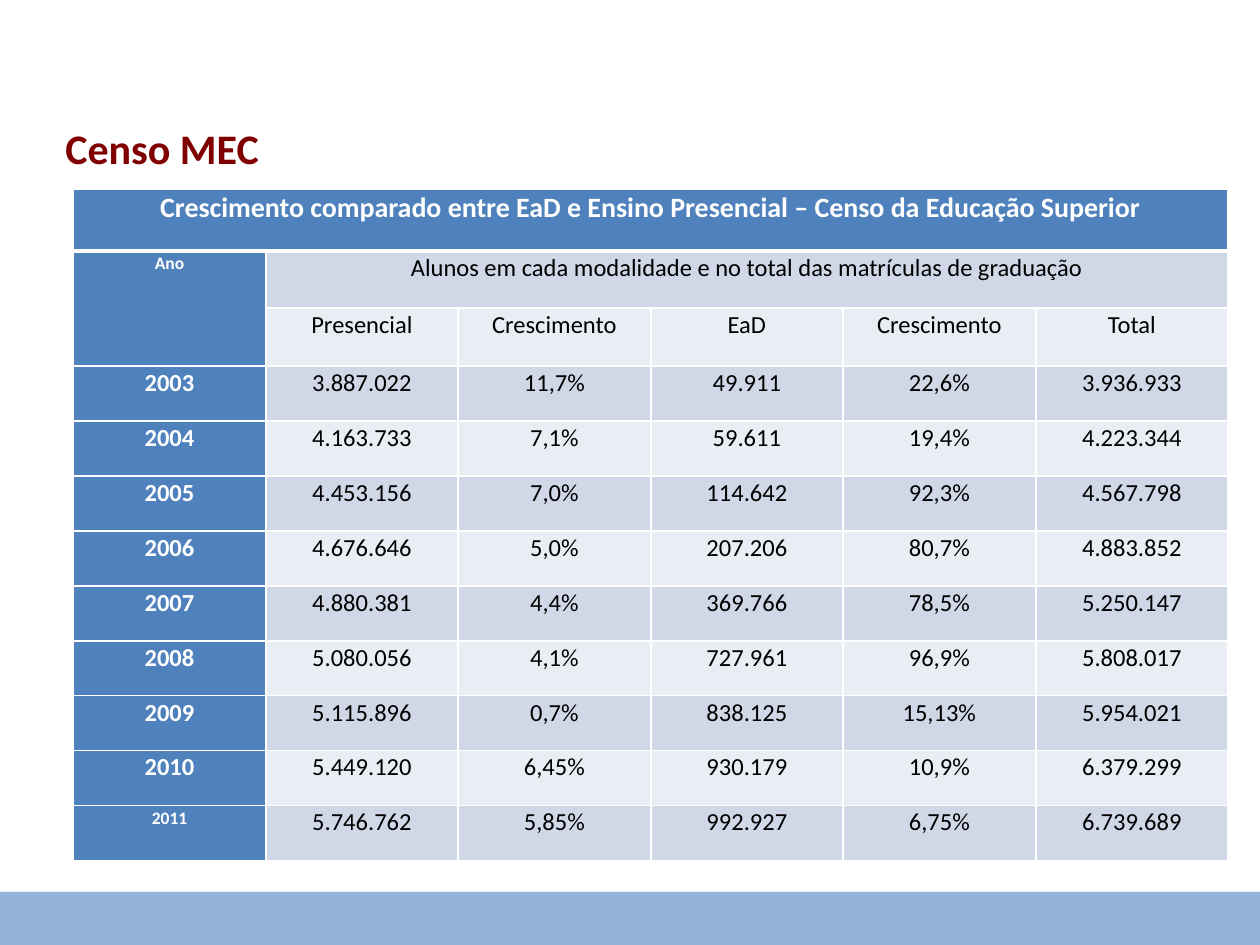
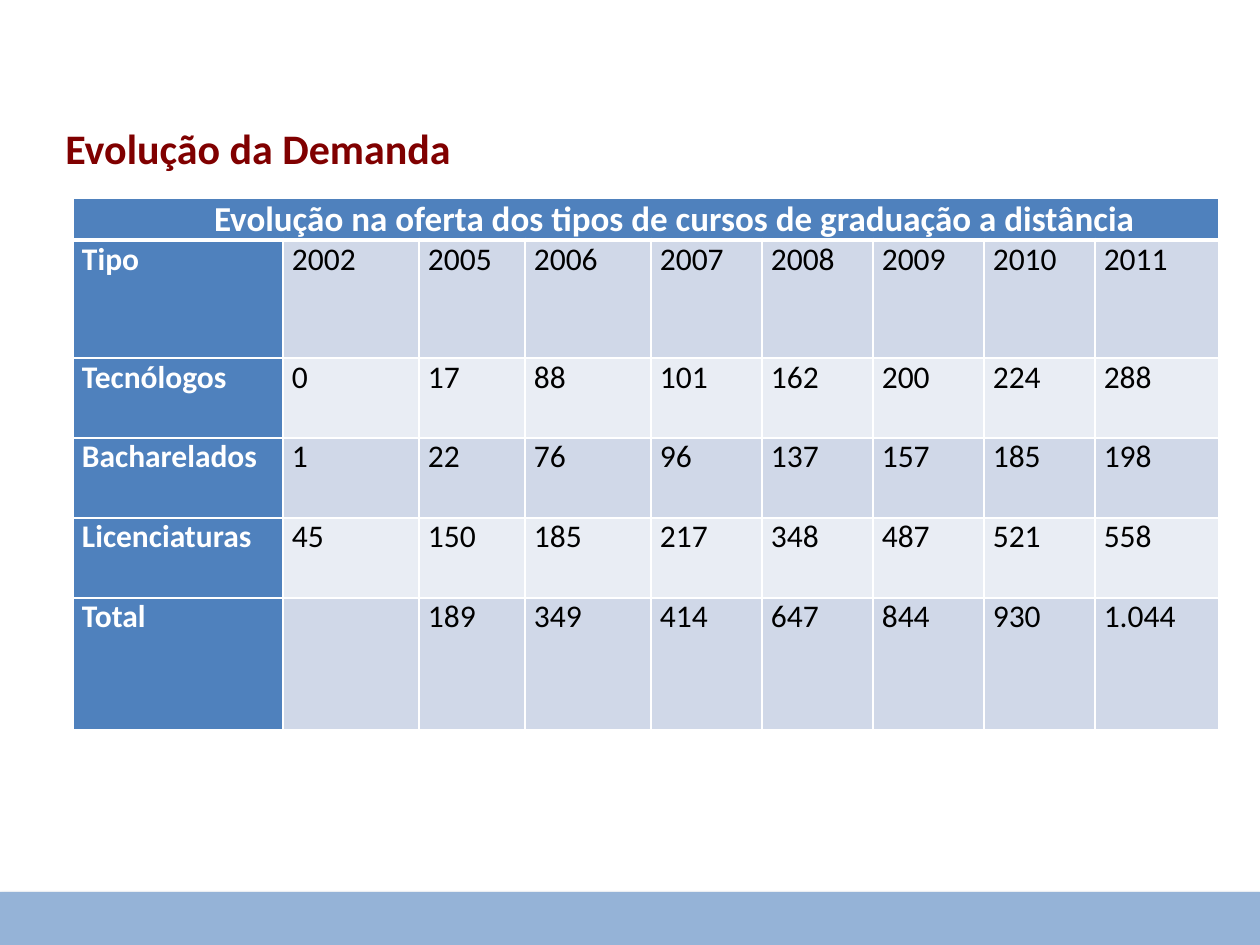
from dataclasses import dataclass

from lxml.etree import SubElement
from pptx import Presentation
from pptx.dml.color import RGBColor as RGB
from pptx.enum.shapes import MSO_SHAPE as SHAPE
from pptx.enum.text import PP_ALIGN as ALIGN
from pptx.oxml import parse_xml
from pptx.oxml.ns import nsdecls, qn
from pptx.util import Emu, Pt

PX = 914400 / 126


def px(n):
    return Emu(round(n * PX))


@dataclass(frozen=True)
class Theme:
    font: str = "Calibri"
    band: str = "95B3D7"
    title: str = "800000"
    head: str = "4F81BD"
    stripes: tuple = ("E9EDF4", "D0D8E8")
    light: str = "FFFFFF"
    dark: str = "000000"
    title_size: int = 24
    small_size: int = 10
    thin: int = 1
    thick: int = 3


class Deck:
    def __init__(self, theme, width, height):
        self.theme = theme
        self.width, self.height = width, height
        self.prs = Presentation()
        self.prs.slide_width, self.prs.slide_height = px(width), px(height)

    def slide(self, title, title_height):
        self.s = self.prs.slides.add_slide(self.prs.slide_layouts[6])
        self.band(892)
        self.title(title, title_height)

    def band(self, top):
        sp = self.s.shapes.add_shape(
            SHAPE.RECTANGLE, 0, px(top), px(self.width), px(self.height - top))
        sp.fill.solid()
        sp.fill.fore_color.rgb = RGB.from_string(self.theme.band)
        sp.line.fill.background()
        sp.shadow.inherit = False
        effects = sp._element.spPr.find(qn("a:effectLst"))
        effects.append(parse_xml(
            f'<a:outerShdw {nsdecls("a")} blurRad="{Pt(3.1)}" dist="{Pt(1.8)}" '
            f'dir="5400000" rotWithShape="0"><a:srgbClr val="{self.theme.dark}">'
            '<a:alpha val="35000"/></a:srgbClr></a:outerShdw>'))

    def title(self, text, height):
        sp = self.s.shapes.add_textbox(px(53), px(116), px(1197), px(height))
        tf = sp.text_frame
        tf.word_wrap = True
        self.put_text(tf, text, self.theme.title_size, self.theme.title, True)

    def put_text(self, tf, text, size, color, bold, align=None):
        p = tf.paragraphs[0]
        p.alignment = align
        if text:
            r = p.add_run()
            r.text = text
            fmt = {"name": self.theme.font, "size": Pt(size), "bold": bold}
            for key, value in fmt.items():
                setattr(r.font, key, value)
            r.font.color.rgb = RGB.from_string(color)

    def borders(self, cell, top, bottom):
        tcPr = cell._tc.get_or_add_tcPr()
        widths = {"lnL": self.theme.thin, "lnR": self.theme.thin, "lnT": top, "lnB": bottom}
        for tag, width in widths.items():
            ln = SubElement(tcPr, qn(f"a:{tag}"), w=str(Pt(width)))
            fill = SubElement(ln, qn("a:solidFill"))
            SubElement(fill, qn("a:srgbClr"), val=self.theme.light)

    def table(self, left, top, cols, heights, rows, merges, margins,
              head_size, size, align, small=(), head_indent=0):
        t = self.theme
        tbl = self.s.shapes.add_table(
            len(heights), len(cols), px(left), px(top),
            px(sum(cols)), px(sum(heights))).table
        for col, width in zip(tbl.columns, cols):
            col.width = px(width)
        for row, height in zip(tbl.rows, heights):
            row.height = px(height)
        for i, values in enumerate(rows):
            for j in range(len(cols)):
                cell = tbl.cell(i, j)
                head = i == 0 or j == 0
                self.borders(cell, t.thick if i == 1 else t.thin,
                             t.thick if i == 0 else t.thin)
                cell.fill.solid()
                cell.fill.fore_color.rgb = RGB.from_string(
                    t.head if head else t.stripes[i % 2])
                for side, value in margins.items():
                    setattr(cell, f"margin_{side}", px(value))
                text = values[j] if j < len(values) else ""
                points = head_size if i == 0 else size
                if (i, j) in small:
                    points = t.small_size
                self.put_text(cell.text_frame, text, points, t.light if head else t.dark,
                              head, ALIGN.CENTER if i == 0 else align)
        for first, last in merges:
            tbl.cell(*first).merge(tbl.cell(*last))
        if head_indent:
            pPr = tbl.cell(0, 0).text_frame.paragraphs[0]._p.get_or_add_pPr()
            pPr.set("marL", str(px(head_indent)))
            pPr.set("indent", "0")


CENSUS = [
    ["Crescimento comparado entre EaD e Ensino Presencial – Censo da Educação Superior"],
    ["Ano", "Alunos em cada modalidade e no total das matrículas de graduação"],
    ["", "Presencial", "Crescimento", "EaD", "Crescimento", "Total"],
    ["2003", "3.887.022", "11,7%", "49.911", "22,6%", "3.936.933"],
    ["2004", "4.163.733", "7,1%", "59.611", "19,4%", "4.223.344"],
    ["2005", "4.453.156", "7,0%", "114.642", "92,3%", "4.567.798"],
    ["2006", "4.676.646", "5,0%", "207.206", "80,7%", "4.883.852"],
    ["2007", "4.880.381", "4,4%", "369.766", "78,5%", "5.250.147"],
    ["2008", "5.080.056", "4,1%", "727.961", "96,9%", "5.808.017"],
    ["2009", "5.115.896", "0,7%", "838.125", "15,13%", "5.954.021"],
    ["2010", "5.449.120", "6,45%", "930.179", "10,9%", "6.379.299"],
    ["2011", "5.746.762", "5,85%", "992.927", "6,75%", "6.739.689"],
]

COURSES = [
    ["Evolução na oferta dos tipos de cursos de graduação a distância"],
    ["Tipo", "2002", "2005", "2006", "2007", "2008", "2009", "2010", "2011"],
    ["Tecnólogos", "0", "17", "88", "101", "162", "200", "224", "288"],
    ["Bacharelados", "1", "22", "76", "96", "137", "157", "185", "198"],
    ["Licenciaturas", "45", "150", "185", "217", "348", "487", "521", "558"],
    ["Total", "", "189", "349", "414", "647", "844", "930", "1.044"],
]


def main():
    deck = Deck(Theme(), 1260, 945)

    deck.slide("Censo MEC", 115)
    deck.table(73, 189, [193, 192] * 3, [62, 57, 58] + [55] * 9, CENSUS,
               merges=[((0, 0), (0, 5)), ((1, 0), (2, 0)), ((1, 1), (1, 5))],
               margins={"left": 9, "top": 2, "right": 9, "bottom": 2},
               head_size=16, size=14, align=ALIGN.CENTER, small={(1, 0), (11, 0)})

    deck.slide("Evolução da Demanda", 165)
    deck.table(73, 198, [210, 136, 106, 126] + [111] * 4 + [124],
               [42, 118] + [80] * 3 + [132], COURSES,
               merges=[((0, 0), (0, 8))],
               margins={"left": 9, "top": 0, "right": 15, "bottom": 0},
               head_size=20, size=18, align=ALIGN.JUSTIFY, head_indent=63)

    deck.prs.save("out.pptx")


if __name__ == "__main__":
    main()
